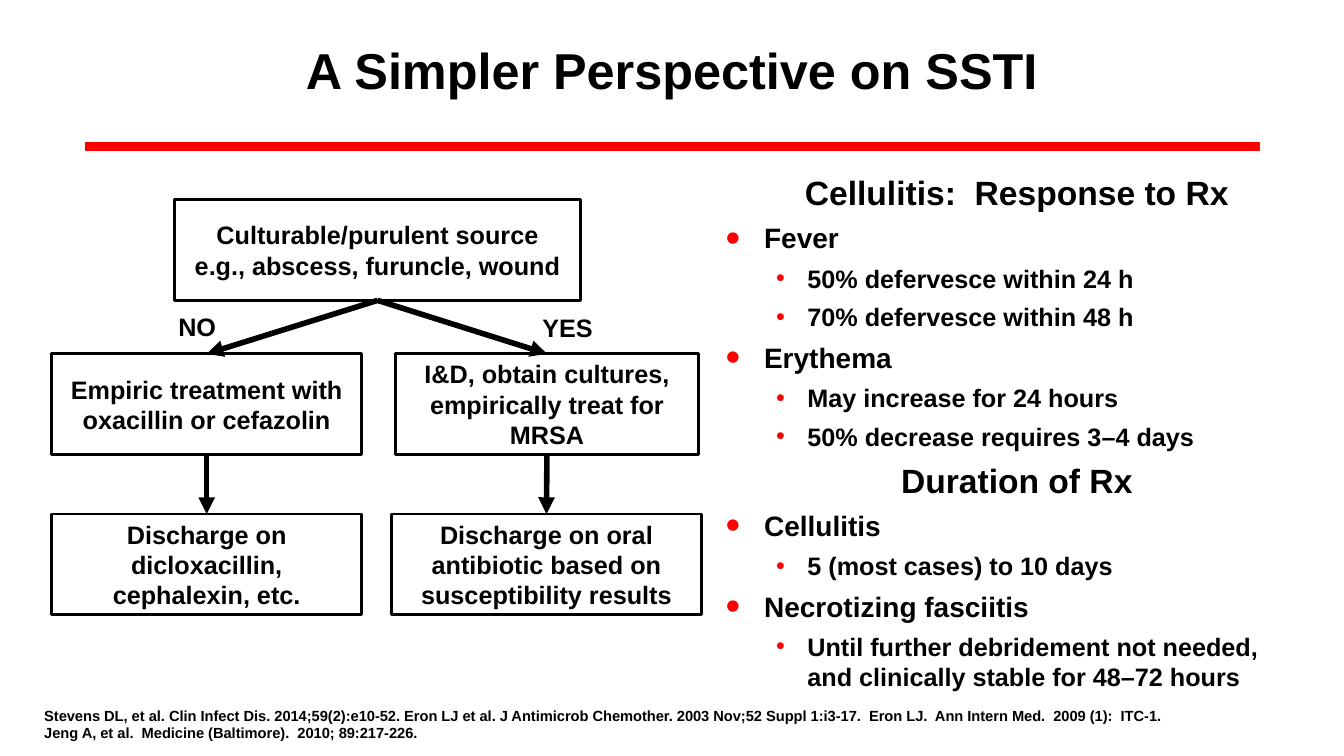
from lxml import etree
from pptx import Presentation
from pptx.dml.color import RGBColor
from pptx.enum.shapes import MSO_CONNECTOR, MSO_SHAPE
from pptx.enum.text import MSO_ANCHOR, MSO_AUTO_SIZE, PP_ALIGN
from pptx.oxml.ns import qn
from pptx.util import Inches, Pt

CENTER, LEFT = PP_ALIGN.CENTER, PP_ALIGN.LEFT
MIDDLE, TOP = MSO_ANCHOR.MIDDLE, MSO_ANCHOR.TOP
STRAIGHT = MSO_CONNECTOR.STRAIGHT
RECTANGLE = MSO_SHAPE.RECTANGLE
NO_AUTOFIT = MSO_AUTO_SIZE.NONE
BOX_TOP, BOX_BOTTOM = 0, 2

HEADING, TOPIC, DETAIL = "heading", "topic", "detail"
OUTLINE = [
    (HEADING, "Cellulitis:  Response to Rx"),
    (TOPIC, "Fever"),
    (DETAIL, "50% defervesce within 24 h"),
    (DETAIL, "70% defervesce within 48 h"),
    (TOPIC, "Erythema"),
    (DETAIL, "May increase for 24 hours"),
    (DETAIL, "50% decrease requires 3–4 days"),
    (HEADING, "Duration of Rx"),
    (TOPIC, "Cellulitis"),
    (DETAIL, "5 (most cases) to 10 days"),
    (TOPIC, "Necrotizing fasciitis"),
    (DETAIL, "Until further debridement not needed, and clinically stable for 48–72 hours"),
]
REFERENCES = (
    "Stevens DL, et al. Clin Infect Dis. 2014;59(2):e10-52. Eron LJ et al. "
    "J Antimicrob Chemother. 2003 Nov;52 Suppl 1:i3-17.  Eron LJ.  "
    "Ann Intern Med.  2009 (1):  ITC-1.\n"
    "Jeng A, et al.  Medicine (Baltimore).  2010; 89:217-226."
)


def color(hex_code):
    return RGBColor.from_string(hex_code)


class SlideBuilder:
    FONT = "Arial"
    INK = "000000"
    ACCENT = "FF0000"
    # size, level, left margin, hanging indent, bullet size in percent
    OUTLINE_STYLES = {
        HEADING: (24, 0, 0, 0, None),
        TOPIC: (20, 0, 0.38, 0.38, 150),
        DETAIL: (18, 1, 0.81, 0.31, 100),
    }

    def __init__(self, slide):
        self.slide = slide
        self.shapes = slide.shapes

    def add_text(self, paragraph, text, size, align=LEFT):
        """Fill a paragraph with styled runs, one for each line of text."""
        paragraph.alignment = align
        for number, line in enumerate(text.split("\n")):
            if number:
                paragraph.add_line_break()
            run = paragraph.add_run()
            run.text = line
            run.font.name = self.FONT
            run.font.size = Pt(size)
            run.font.bold = True
            run.font.color.rgb = color(self.INK)

    def title(self, text, left, top, width, height):
        title = self.shapes.title
        title.left, title.top = Inches(left), Inches(top)
        title.width, title.height = Inches(width), Inches(height)
        frame = title.text_frame
        frame.auto_size = NO_AUTOFIT
        frame.vertical_anchor = MIDDLE
        self.add_text(frame.paragraphs[0], text, 36, CENTER)

    def rectangle(self, left, top, width, height, line, line_width):
        shape = self.shapes.add_shape(
            RECTANGLE, Inches(left), Inches(top), Inches(width), Inches(height))
        shape.shadow.inherit = False
        shape.fill.background()
        shape.line.color.rgb = color(line)
        shape.line.width = Pt(line_width)
        return shape

    def rule(self, left, top, width, height):
        bar = self.rectangle(left, top, width, height, self.ACCENT, 1)
        bar.fill.solid()
        bar.fill.fore_color.rgb = color(self.ACCENT)

    def step(self, text, left, top, width):
        box = self.rectangle(left, top, width, 1, self.INK, 2)
        frame = box.text_frame
        frame.word_wrap = True
        frame.vertical_anchor = MIDDLE
        self.add_text(frame.paragraphs[0], text, 18, CENTER)
        return box

    def arrow(self, source, target):
        """Join the bottom of one step to the top of the next."""
        arrow = self.shapes.add_connector(STRAIGHT, 0, 0, 0, 0)
        arrow.begin_connect(source, BOX_BOTTOM)
        arrow.end_connect(target, BOX_TOP)
        arrow.line.color.rgb = color(self.INK)
        arrow.line.width = Pt(4)
        properties = arrow._element.spPr
        etree.SubElement(properties.find(qn("a:ln")), qn("a:tailEnd"), type="triangle")
        etree.SubElement(properties, qn("a:effectLst"))

    def text_frame(self, left, top, width, height, wrap=True):
        box = self.shapes.add_textbox(
            Inches(left), Inches(top), Inches(width), Inches(height))
        box.text_frame.word_wrap = wrap
        box.text_frame.vertical_anchor = TOP
        return box.text_frame

    def label(self, text, left, top, width, height, size=18, wrap=False):
        frame = self.text_frame(left, top, width, height, wrap)
        self.add_text(frame.paragraphs[0], text, size)

    def outline(self, entries, left, top, width, height):
        frame = self.text_frame(left, top, width, height)
        for number, (kind, text) in enumerate(entries):
            paragraph = frame.add_paragraph() if number else frame.paragraphs[0]
            size, level, margin, hanging, bullet_size = self.OUTLINE_STYLES[kind]
            self.add_text(paragraph, text, size, CENTER if kind == HEADING else LEFT)
            paragraph.level = level
            paragraph.space_after = Pt(6)
            if bullet_size:
                self.bullet(paragraph, margin, hanging, bullet_size)

    def bullet(self, paragraph, margin, hanging, percent):
        properties = paragraph._p.get_or_add_pPr()
        properties.set("marL", str(Inches(margin)))
        properties.set("indent", str(-Inches(hanging)))
        bullet_color = etree.SubElement(properties, qn("a:buClr"))
        etree.SubElement(bullet_color, qn("a:srgbClr"), val=self.ACCENT)
        etree.SubElement(properties, qn("a:buSzPct"), val=str(percent * 1000))
        etree.SubElement(properties, qn("a:buFont"), typeface=self.FONT)
        etree.SubElement(properties, qn("a:buChar"), char="•")


def main():
    presentation = Presentation()
    presentation.slide_width = Inches(13.33)
    presentation.slide_height = Inches(7.5)
    title_only = presentation.slide_layouts[5]
    builder = SlideBuilder(presentation.slides.add_slide(title_only))

    builder.rule(0.85, 1.42, 11.64, 0.07)
    builder.title("A Simpler Perspective on SSTI", 0.74, 0.08, 11.85, 1.22)

    source = builder.step(
        "Culturable/purulent source\ne.g., abscess, furuncle, wound", 1.73, 1.98, 4.03)
    empiric = builder.step(
        "Empiric treatment with oxacillin or cefazolin", 0.51, 3.51, 3.08)
    drainage = builder.step(
        "I&D, obtain cultures, empirically treat for MRSA", 3.92, 3.51, 3.01)
    discharge_empiric = builder.step(
        "Discharge on dicloxacillin, cephalexin, etc.", 0.51, 5.1, 3.08)
    discharge_guided = builder.step(
        "Discharge on oral antibiotic based on susceptibility results", 3.88, 5.1, 3.08)

    for start, end in [(source, empiric), (source, drainage),
                       (empiric, discharge_empiric), (drainage, discharge_guided)]:
        builder.arrow(start, end)

    builder.outline(OUTLINE, 7.1, 1.66, 5.97, 5.13)
    builder.label(REFERENCES, 0.34, 6.96, 12.26, 0.45, size=10.5, wrap=True)
    builder.label("NO", 1.67, 3.04, 0.58, 0.4)
    builder.label("YES", 5.28, 3.05, 0.71, 0.4)

    presentation.save("out.pptx")


if __name__ == "__main__":
    main()
